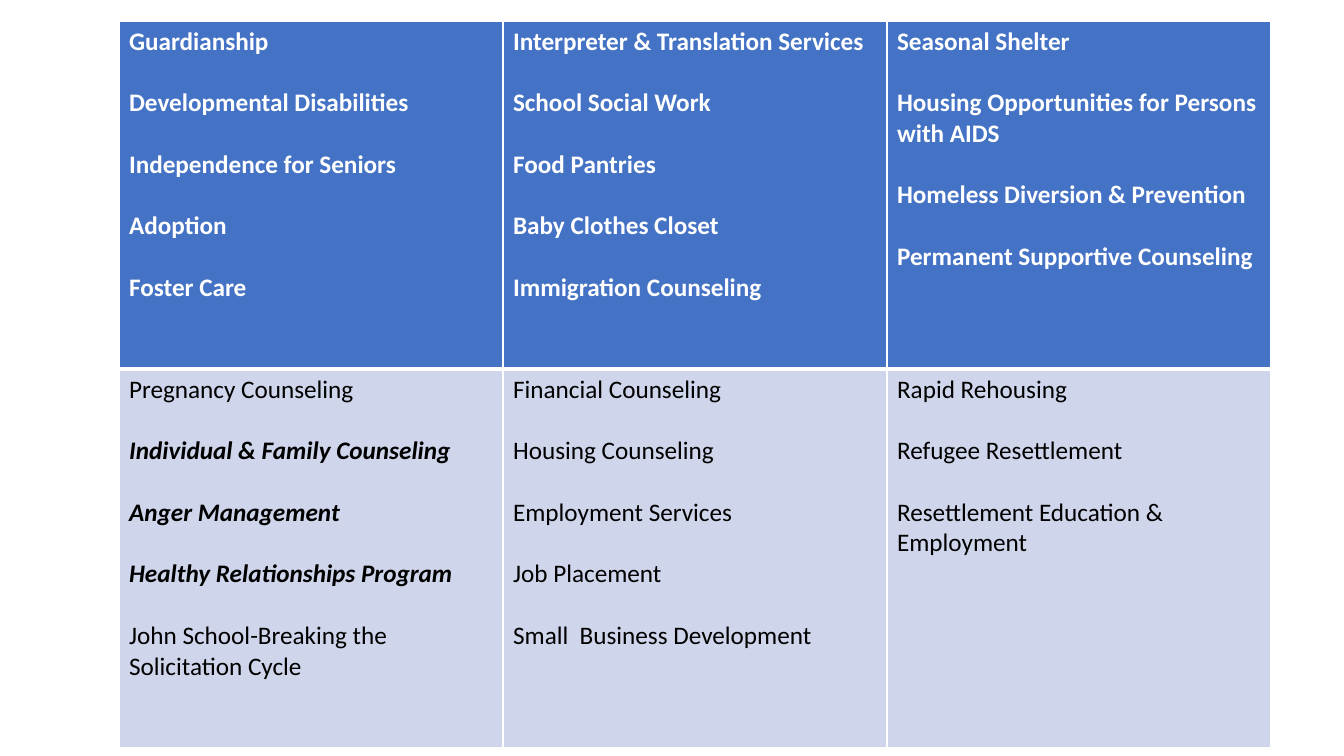
from dataclasses import dataclass

from lxml import etree
from pptx import Presentation
from pptx import util as u
from pptx.dml.color import RGBColor
from pptx.oxml import ns

SCALE = 12192000 / 1344  # EMU in one px


def px(n: int) -> u.Emu:
    return u.Emu(round(n * SCALE))


@dataclass(frozen=True)
class Theme:
    font: str = "Calibri"
    size: int = 18
    gap: int = 22
    blue: str = "4472C4"
    pale: str = "CFD5EA"
    white: str = "FFFFFF"
    black: str = "000000"


@dataclass(frozen=True)
class Band:
    """One table row: its look and the services in each column."""
    height: int
    fill: str
    ink: str
    bold: bool
    base: int  # bottom border in points
    lists: tuple[tuple[str, ...], ...]


THEME = Theme()
LEFT, TOP, COL = 119, 21, 384

# Services set in bold italics
STRONG = {
    "Individual & Family Counseling",
    "Anger Management",
    "Healthy Relationships Program",
}

BANDS = (
    Band(348, THEME.blue, THEME.white, True, 3, (
        ("Guardianship", "Developmental Disabilities",
         "Independence for Seniors", "Adoption", "Foster Care"),
        ("Interpreter & Translation Services", "School Social Work",
         "Food Pantries", "Baby Clothes Closet", "Immigration Counseling"),
        ("Seasonal Shelter", "Housing Opportunities for Persons with AIDS",
         "Homeless Diversion & Prevention", "Permanent Supportive Counseling"),
    )),
    Band(379, THEME.pale, THEME.black, False, 1, (
        ("Pregnancy Counseling", "Individual & Family Counseling",
         "Anger Management", "Healthy Relationships Program",
         "John School-Breaking the Solicitation Cycle"),
        ("Financial Counseling", "Housing Counseling", "Employment Services",
         "Job Placement", "Small  Business Development"),
        ("Rapid Rehousing", "Refugee Resettlement",
         "Resettlement Education & Employment"),
    )),
)


def edge(cell, base: int) -> None:
    """Draw white borders, placed ahead of the cell fill."""
    props = cell._tc.get_or_add_tcPr()
    for i, side in enumerate("LRTB"):
        width = base if side == "B" else 1
        line = etree.Element(ns.qn(f"a:ln{side}"), w=str(u.Pt(width)))
        solid = etree.SubElement(line, ns.qn("a:solidFill"))
        etree.SubElement(solid, ns.qn("a:srgbClr"), val=THEME.white)
        props.insert(i, line)


def write(cell, band: Band, names: tuple[str, ...]) -> None:
    cell.fill.solid()
    cell.fill.fore_color.rgb = RGBColor.from_string(band.fill)
    edge(cell, band.base)
    cell.text_frame.text = "\n".join(names)
    for i, para in enumerate(cell.text_frame.paragraphs):
        if i:
            para.space_before = u.Pt(THEME.gap)
        strong = para.text in STRONG
        for run in para.runs:
            font = run.font
            font.name, font.size = THEME.font, u.Pt(THEME.size)
            font.bold, font.italic = band.bold or strong, strong
            font.color.rgb = RGBColor.from_string(band.ink)


def main() -> None:
    deck = Presentation()
    deck.slide_width, deck.slide_height = px(1344), px(756)
    slide = deck.slides.add_slide(deck.slide_layouts[6])

    # Table of services
    cols = len(BANDS[0].lists)
    high = sum(band.height for band in BANDS)
    table = slide.shapes.add_table(
        len(BANDS), cols, px(LEFT), px(TOP), px(COL * cols), px(high)).table
    table.horz_banding = False
    for col in table.columns:
        col.width = px(COL)

    # Rows and their cells
    for row, band in zip(table.rows, BANDS):
        row.height = px(band.height)
        for cell, names in zip(row.cells, band.lists):
            write(cell, band, names)

    deck.save("out.pptx")


if __name__ == "__main__":
    main()
